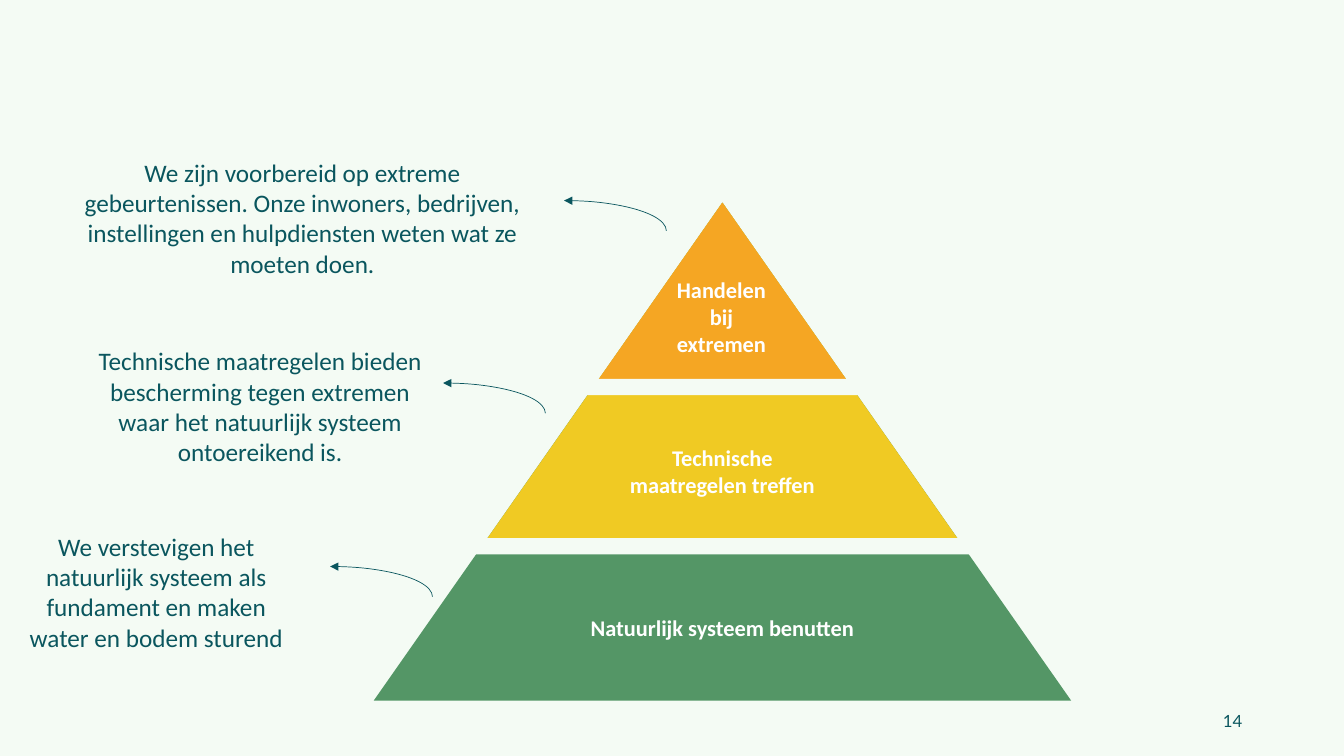
"""Build a slide with a three-layer pyramid of water measures and their explanations."""
from dataclasses import dataclass

from lxml import etree
from pptx import Presentation
from pptx.dml.color import RGBColor
from pptx.enum.shapes import MSO_SHAPE as Shape
from pptx.enum.text import MSO_ANCHOR as Anchor, PP_ALIGN as Align
from pptx.oxml.ns import qn
from pptx.util import Inches, Pt


@dataclass(frozen=True)
class Theme:
    background: str = "F4FBF4"
    dark: str = "0A565E"
    white: str = "FFFFFF"
    green: str = "549666"
    yellow: str = "F0CA23"
    orange: str = "F5A623"
    body_font: str = "Calibri"
    number_font: str = "Lato"
    body_size: int = 18
    label_size: int = 16
    number_size: int = 12
    arrow_width: float = 0.5


theme = Theme()
presentation = Presentation()
presentation.slide_width = Inches(13.33)
presentation.slide_height = Inches(7.5)
slide = presentation.slides.add_slide(presentation.slide_layouts[6])
slide.background.fill.solid()
slide.background.fill.fore_color.rgb = RGBColor.from_string(theme.background)


def add_filled(shapes, kind, box, color):
    shape = shapes.add_shape(kind, *map(Inches, box))
    shape.shadow.inherit = False
    shape.fill.solid()
    shape.fill.fore_color.rgb = RGBColor.from_string(color)
    shape.line.fill.background()


def add_text(box, text, size, color, font=theme.body_font, bold=False,
             align=Align.CENTER, anchor=Anchor.TOP):
    text_frame = slide.shapes.add_textbox(*map(Inches, box)).text_frame
    text_frame.word_wrap = True
    text_frame.vertical_anchor = anchor
    text_frame.text = text
    for paragraph in text_frame.paragraphs:
        paragraph.alignment = align
        paragraph.font.name = font
        paragraph.font.size = Pt(size)
        paragraph.font.bold = bold
        paragraph.font.color.rgb = RGBColor.from_string(color)


pyramid = slide.shapes.add_group_shape()
apex_x, apex_y, slope = 7.165, 2.01, 1.4
for height, color in [(4.94, theme.green), (3.34, theme.yellow), (1.78, theme.orange)]:
    width = height * slope
    box = (apex_x - width / 2, apex_y, width, height)
    add_filled(pyramid.shapes, Shape.ISOSCELES_TRIANGLE, box, color)
for left, top in [(4.33, 3.76), (4.57, 5.34)]:
    add_filled(pyramid.shapes, Shape.RECTANGLE, (left, top, 5.17, 0.16), theme.background)

layer_labels = [
    ((6.5, 2.69, 1.31, 0.9), "Handelen bij extremen", Anchor.TOP),
    ((5.98, 3.93, 2.37, 1.48), "Technische maatregelen treffen", Anchor.MIDDLE),
    ((5.03, 5.46, 4.27, 1.53), "Natuurlijk systeem benutten", Anchor.MIDDLE),
]
for box, text, anchor in layer_labels:
    add_text(box, text, theme.label_size, theme.white, bold=True, anchor=anchor)

explanations = [
    ((0.6, 1.51, 4.8, 1.31),
     "We zijn voorbereid op extreme gebeurtenissen. Onze inwoners, bedrijven, "
     "instellingen en hulpdiensten weten wat ze moeten doen."),
    ((0.83, 3.38, 3.5, 1.31),
     "Technische maatregelen bieden bescherming tegen extremen "
     "waar het natuurlijk systeem ontoereikend is."),
    ((0.11, 5.22, 2.88, 1.31),
     "We verstevigen het natuurlijk systeem als fundament en maken\n"
     "water en bodem sturend"),
]
for box, text in explanations:
    add_text(box, text, theme.body_size, theme.dark)

for left, top in [(4.58, 1.99), (3.38, 3.8), (2.26, 5.62)]:
    arrow = slide.shapes.add_shape(Shape.ARC, *map(Inches, (left, top, 2.03, 0.6)))
    arrow.shadow.inherit = False
    arrow.fill.background()
    arrow.line.color.rgb = RGBColor.from_string(theme.dark)
    arrow.line.width = Pt(theme.arrow_width)
    line = arrow.line._get_or_add_ln()
    etree.SubElement(line, qn("a:headEnd"), type="triangle")

add_text((9.42, 6.95, 3, 0.4), "14", theme.number_size, theme.dark,
         font=theme.number_font, align=Align.RIGHT, anchor=Anchor.MIDDLE)

presentation.save("out.pptx")
